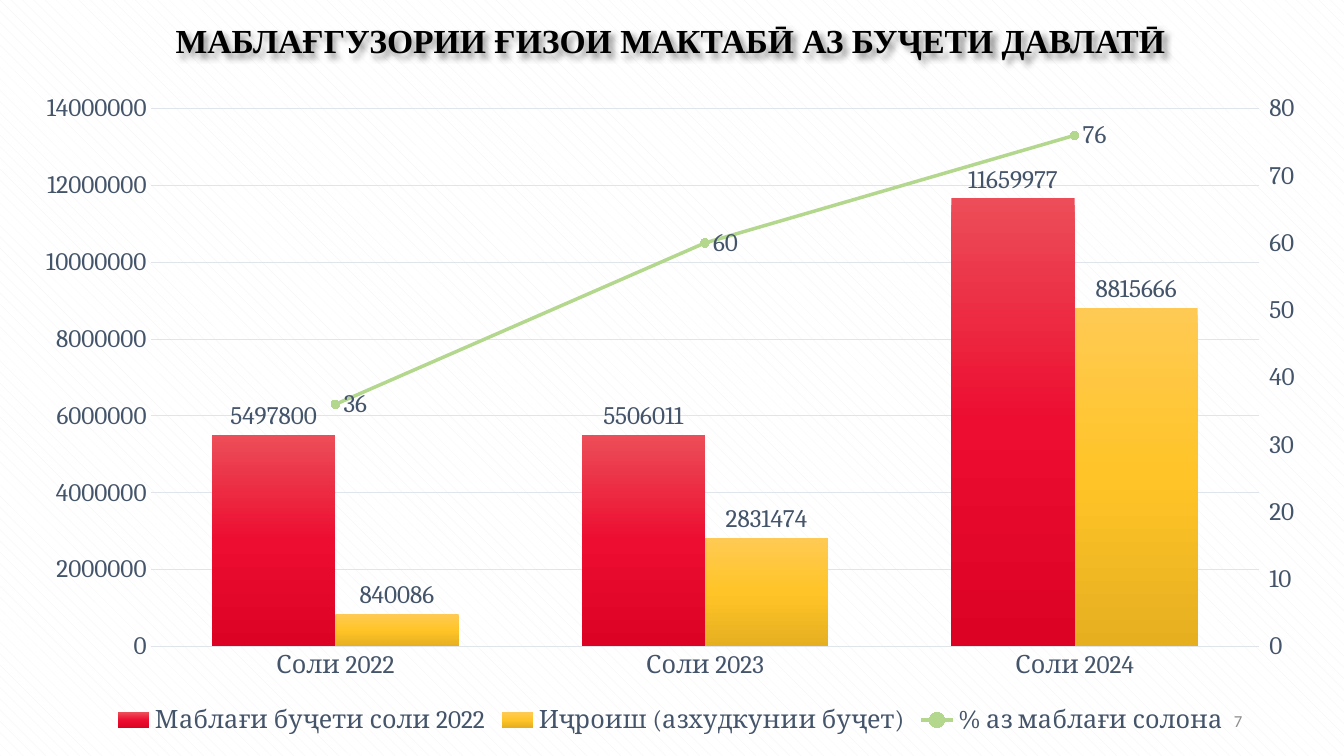
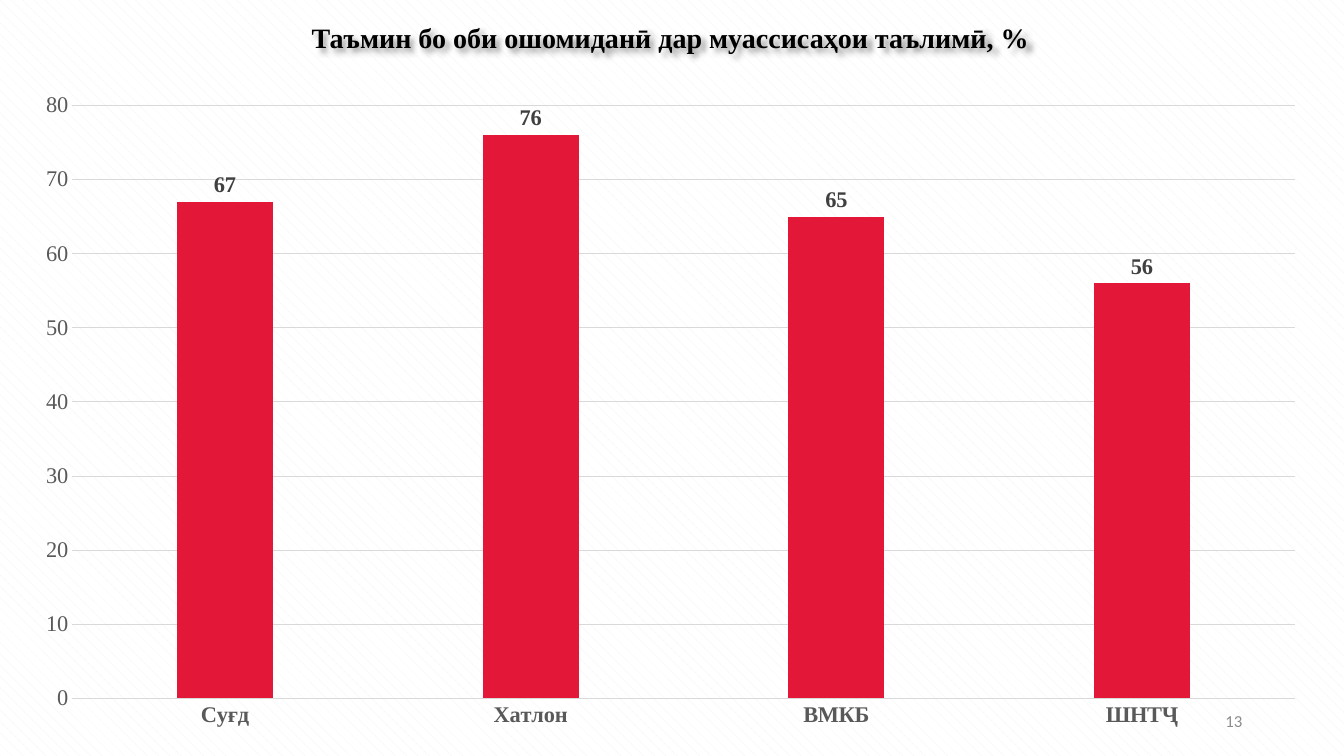
from copy import deepcopy
from lxml import etree
from pptx import Presentation
from pptx.chart.axis import ValueAxis
from pptx.chart.data import CategoryChartData
from pptx.dml.color import RGBColor
from pptx.enum import chart as ch, dml, text
from pptx.oxml import parse_xml
from pptx.oxml.ns import nsdecls, qn
from pptx.util import Inches, Pt

BLACK = RGBColor(0, 0, 0)
WHITE = RGBColor(0xFF, 0xFF, 0xFF)
PALE = RGBColor(0xF2, 0xF2, 0xF2)
GRAY = RGBColor(0x8C, 0x8C, 0x8C)
SLATE = RGBColor(0x44, 0x54, 0x6A)
MIST = RGBColor(0xE0, 0xE5, 0xEB)
DARK = RGBColor(0x40, 0x40, 0x40)
DIM = RGBColor(0x59, 0x59, 0x59)
RULE = RGBColor(0xD9, 0xD9, 0xD9)
RED = RGBColor(0xE3, 0x17, 0x37)
GREEN = RGBColor(0xB4, 0xD7, 0x8E)
DOT = RGBColor(0xB4, 0xDB, 0x8A)
REDS = [RGBColor(0xEC, 0x4D, 0x58), RGBColor(0xED, 0x0D, 0x30), RGBColor(0xDC, 0x02, 0x24)]
GOLDS = [RGBColor(0xFF, 0xCA, 0x54), RGBColor(0xFF, 0xC4, 0x27), RGBColor(0xE5, 0xAF, 0x20)]
SERIF = "Times New Roman"

# Content: fills hold one colour, or three for a gradient
FOOD = dict(
    title="МАБЛАҒГУЗОРИИ ҒИЗОИ МАКТАБӢ АЗ БУҶЕТИ ДАВЛАТӢ", size=24, page="7",
    top=0.8, high=6.54, font="Cambria", pt=18, bold=False,
    ink=SLATE, tag=SLATE, grid=MIST, gap=100, lap=0,
    cats=["Соли 2022", "Соли 2023", "Соли 2024"],
    rows=[("Маблағи буҷети соли 2022", [5497800, 5506011, 11659977]),
          ("Иҷроиш (азхудкунии буҷет)", [840086, 2831474, 8815666]),
          ("% аз маблағи солона", [36, 60, 76])],
    fills=[REDS, GOLDS])
WATER = dict(
    title="Таъмин бо оби ошомиданӣ дар муассисаҳои таълимӣ, %", size=20, page="13",
    top=0.79, high=6.56, font=SERIF, pt=16, bold=True,
    ink=DIM, tag=DARK, grid=RULE, gap=219, lap=-27,
    cats=["Суғд", "Хатлон", "ВМКБ", "ШНТҶ"],
    rows=[("Series 1", [67, 76, 65, 56])],
    fills=[[RED]])

SHADOW = f"""<a:effectLst {nsdecls('a')}>
<a:outerShdw blurRad="50800" dist="38100" dir="2700000" algn="tl" rotWithShape="0">
<a:srgbClr val="000000"><a:alpha val="40000"/></a:srgbClr></a:outerShdw></a:effectLst>"""

LINE = f"""<c:lineChart {nsdecls('c')}><c:grouping val="standard"/><c:varyColors val="0"/>
<c:marker val="1"/><c:axId val="501"/><c:axId val="502"/></c:lineChart>"""
HIDDEN = f"""<c:catAx {nsdecls('c')}><c:axId val="501"/>
<c:scaling><c:orientation val="minMax"/></c:scaling><c:delete val="1"/>
<c:axPos val="b"/><c:crossAx val="502"/><c:crosses val="autoZero"/></c:catAx>"""
RIGHT = f"""<c:valAx {nsdecls('c')}><c:axId val="502"/>
<c:scaling><c:orientation val="minMax"/></c:scaling><c:delete val="0"/>
<c:axPos val="r"/><c:numFmt formatCode="General" sourceLinked="0"/>
<c:majorTickMark val="out"/><c:minorTickMark val="none"/><c:tickLblPos val="nextTo"/>
<c:crossAx val="501"/><c:crosses val="max"/></c:valAx>"""


def style(font, name, size, color, bold=False):
    font.name, font.size, font.bold = name, Pt(size), bold
    font.color.rgb = color


def write(slide, box, words, align, *look):
    shape = slide.shapes.add_textbox(*map(Inches, box))
    frame = shape.text_frame
    frame.word_wrap = True
    par = frame.paragraphs[0]
    par.alignment = align
    run = par.add_run()
    run.text = words
    style(run.font, *look)
    return shape


def paint(ser, colors):
    fill = ser.format.fill
    if len(colors) == 1:
        fill.solid()
        fill.fore_color.rgb = colors[0]
        return
    fill.gradient()
    fill.gradient_angle = 270
    stops = ser.format.element.find(".//" + qn("a:gsLst")) if hasattr(ser.format, "element") \
        else ser._element.find(".//" + qn("a:gsLst"))
    stops.insert(1, deepcopy(stops[0]))
    for i, (stop, color) in enumerate(zip(fill.gradient_stops, colors)):
        stop.position = i / 2
        stop.color.rgb = color


def label(ser, d, place):
    tags = ser.data_labels
    tags.show_value = True
    tags.position = place
    style(tags.font, d["font"], d["pt"], d["tag"], d["bold"])


def add_line(chart, d):
    """Move the last series to a line on a right-hand axis."""
    area = chart.plots[0]._element.getparent()
    bars = area.find(qn("c:barChart"))
    ser = bars.findall(qn("c:ser"))[-1]
    line = parse_xml(LINE)
    line.insert(2, ser)
    for flag in ser.findall(qn("c:invertIfNegative")):
        ser.remove(flag)
    bars.addnext(line)
    axis = parse_xml(RIGHT)
    last = area.findall(qn("c:valAx"))[-1]
    last.addnext(axis)
    axis.addnext(parse_xml(HIDDEN))

    right = ValueAxis(axis)
    right.format.line.fill.background()
    style(right.tick_labels.font, d["font"], d["pt"], d["ink"])
    ser = chart.plots[1].series[0]
    ser.smooth = False
    ser.format.line.color.rgb = GREEN
    ser.format.line.width = Pt(2.5)
    mark = ser.marker
    mark.style, mark.size = ch.XL_MARKER_STYLE.CIRCLE, 6
    mark.format.fill.solid()
    mark.format.fill.fore_color.rgb = DOT
    mark.format.line.color.rgb = DOT
    label(ser, d, ch.XL_LABEL_POSITION.RIGHT)


def add_bars(slide, d):
    data = CategoryChartData()
    data.categories = d["cats"]
    for name, vals in d["rows"]:
        data.add_series(name, vals)
    box = map(Inches, (0.2, d["top"], 12.9, d["high"]))
    chart = slide.shapes.add_chart(ch.XL_CHART_TYPE.COLUMN_CLUSTERED, *box, data).chart
    style(chart.font, d["font"], d["pt"], BLACK)
    chart.has_title = False
    mixed = len(d["rows"]) > len(d["fills"])
    chart.has_legend = mixed

    # Axes
    for axis in (chart.category_axis, chart.value_axis):
        axis.major_tick_mark = axis.minor_tick_mark = ch.XL_TICK_MARK.NONE
        style(axis.tick_labels.font, d["font"], d["pt"], d["ink"])
    chart.category_axis.tick_labels.font.bold = d["bold"]
    chart.value_axis.format.line.fill.background()
    chart.value_axis.has_major_gridlines = True
    for part in (chart.category_axis, chart.value_axis.major_gridlines):
        part.format.line.color.rgb = d["grid"]
        part.format.line.width = Pt(0.75)

    # Columns, then the line
    plot = chart.plots[0]
    plot.gap_width, plot.overlap = d["gap"], d["lap"]
    plot.vary_by_categories = False
    for ser, colors in zip(plot.series, d["fills"]):
        paint(ser, colors)
        label(ser, d, ch.XL_LABEL_POSITION.OUTSIDE_END)
    if mixed:
        add_line(chart, d)
        chart.legend.position = ch.XL_LEGEND_POSITION.BOTTOM
        chart.legend.include_in_layout = False
        style(chart.legend.font, d["font"], d["pt"], d["ink"])


def build(deck, d):
    slide = deck.slides.add_slide(deck.slide_layouts[6])
    back = slide.background.fill
    back.patterned()
    back.pattern = dml.MSO_PATTERN.SHINGLE
    back.fore_color.rgb, back.back_color.rgb = PALE, WHITE
    head = write(slide, (0.2, 0.15, 12.9, 0.5 if d["size"] > 20 else 0.44), d["title"],
                 text.PP_ALIGN.CENTER, SERIF, d["size"], BLACK, True)
    head._element.spPr.append(etree.fromstring(SHADOW))
    add_bars(slide, d)
    page = write(slide, (9.42, 6.95, 3, 0.4), d["page"],
                 text.PP_ALIGN.RIGHT, "Calibri", 12, GRAY)
    page.text_frame.vertical_anchor = text.MSO_ANCHOR.MIDDLE


def main():
    deck = Presentation()
    deck.slide_width, deck.slide_height = Inches(13.33), Inches(7.5)
    for d in (FOOD, WATER):
        build(deck, d)
    deck.save("out.pptx")


if __name__ == "__main__":
    main()
